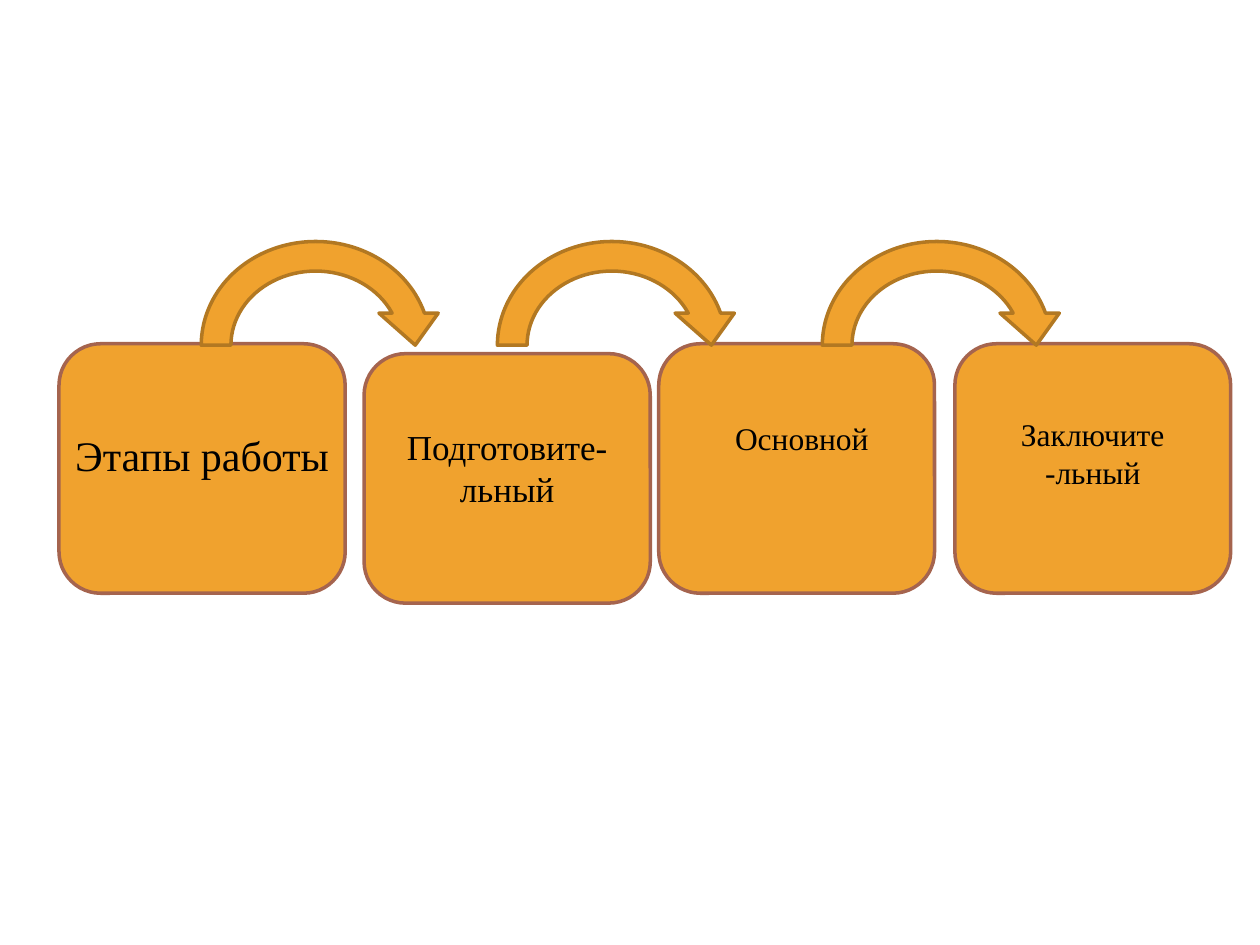
import pptx
import pptx.dml.color
import pptx.enum.shapes
import pptx.enum.text
import pptx.util
from pptx.util import Cm

COLORS = {"fill": "F0A22E", "stage_line": "A5644E", "arrow_line": "B27822", "text": "000000"}
FONT = "Times New Roman"
SHAPES = pptx.enum.shapes.MSO_SHAPE


def color(name):
    """Return the named palette colour."""
    return pptx.dml.color.RGBColor.from_string(COLORS[name])


def add_block(page, kind, box, line):
    """Add a filled, outlined shape in the given box."""
    block = page.shapes.add_shape(kind, *map(Cm, box))
    block.shadow.inherit = False
    block.fill.solid()
    block.fill.fore_color.rgb = color("fill")
    block.line.color.rgb = color(line)
    block.line.width = pptx.util.Pt(2)
    return block


def write(holder, text, size):
    """Write one centred, top-anchored paragraph."""
    frame = holder.text_frame
    frame.word_wrap = True
    frame.vertical_anchor = pptx.enum.text.MSO_ANCHOR.TOP
    para = frame.paragraphs[0]
    para.text = text
    para.alignment = pptx.enum.text.PP_ALIGN.CENTER
    para.font.name = FONT
    para.font.size = pptx.util.Pt(size)
    para.font.color.rgb = color("text")


def add_stage(page, box, text="", size=18):
    """Add a rounded stage, with its label inside if one is given."""
    stage = add_block(page, SHAPES.ROUNDED_RECTANGLE, box, "stage_line")
    if text:
        stage.text_frame.margin_top = Cm(1.2)
        write(stage, text, size)


def add_label(page, box, drop, height, text, size):
    """Add a separate label at a distance below the top of a stage box."""
    left, top = box[:2]
    label = page.shapes.add_textbox(Cm(left), Cm(top + drop), Cm(5.77), Cm(height))
    write(label, text, size)


def add_process(page, left, top):
    """Add the stages, the arrows over them and the separate labels."""
    height = 5.03
    start = (left, top, 5.77, height)
    prepare = (left + 6.15, top + 0.2, 5.77, height)
    main_stage = (left + 12.09, top, 5.56, height)
    finish = (left + 18.06, top, 5.56, height)
    add_stage(page, start)
    add_stage(page, prepare, "Подготовите-льный", 20)
    add_stage(page, main_stage)
    add_stage(page, finish, "Заключите -льный", 18)
    for offset in (2.57, 8.54, 15.09):
        add_block(page, SHAPES.CIRCULAR_ARROW, (left + offset, top - 2.36, 5.21, 4.78), "arrow_line")
    add_label(page, start, 1.6, 1.27, "Этапы работы", 24)
    add_label(page, main_stage, 1.4, 1.02, "Основной", 18)


def main():
    """Build and save the deck."""
    deck = pptx.Presentation()
    deck.slide_width, deck.slide_height = Cm(25.4), Cm(19.05)
    page = deck.slides.add_slide(deck.slide_layouts[6])
    add_process(page, 1.19, 6.93)
    deck.save("out.pptx")


if __name__ == "__main__":
    main()
